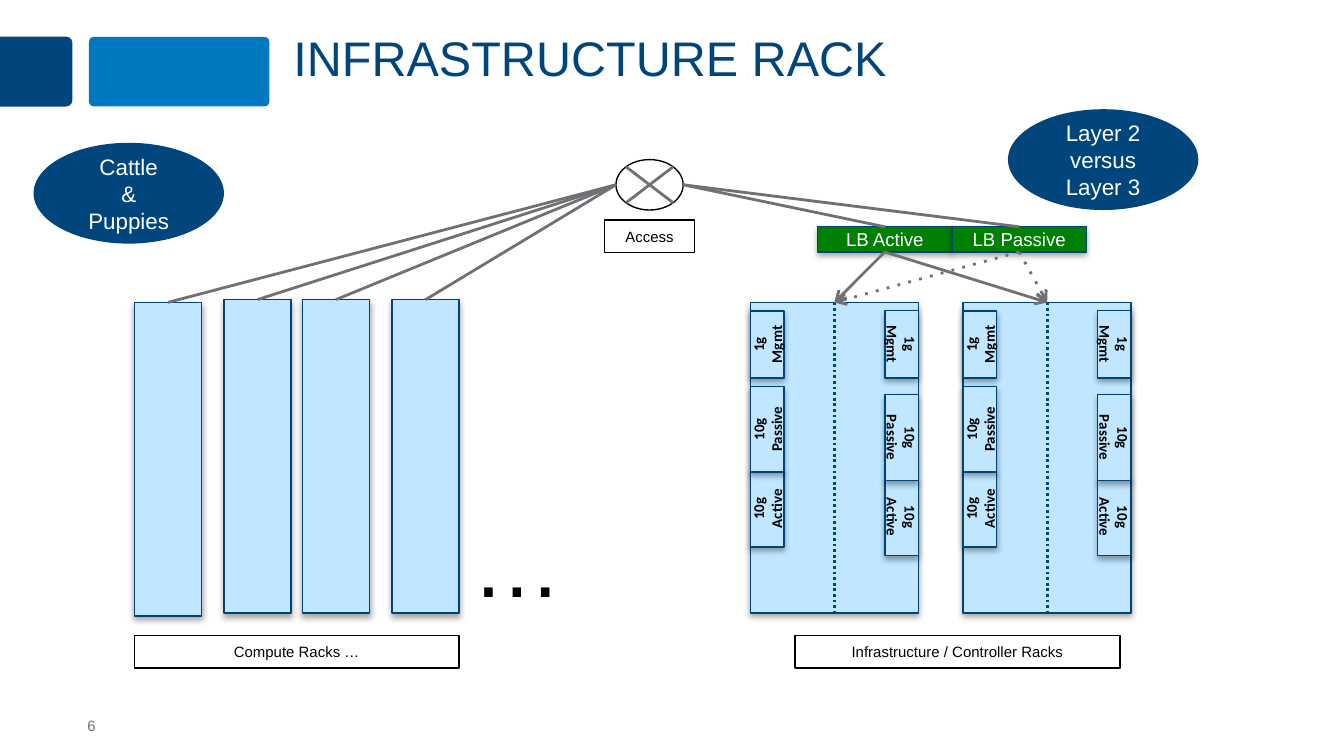
from dataclasses import dataclass

from lxml import etree
from pptx import Presentation, util as u
from pptx.dml import color
from pptx.enum import shapes, text
from pptx.oxml import ns

KIND = shapes.MSO_SHAPE
ALIGN = text.PP_ALIGN
ANCHOR = text.MSO_ANCHOR
TOP, BOTTOM = 0, 2


@dataclass(frozen=True)
class Theme:
    """Colours, fonts and type sizes of the slide."""
    navy: str = "00457C"
    blue: str = "0079C1"
    edge: str = "004379"
    pale: str = "C0E7FF"
    green: str = "008000"
    grey: str = "717074"
    black: str = "000000"
    white: str = "FFFFFF"
    font: str = "Arial"
    port_font: str = "Calibri"
    heading: float = 26
    dots: float = 48
    callout: float = 12
    balancer: float = 10
    small: float = 8
    thin: float = 0.75
    thick: float = 1.5


def rgb(value):
    """Turn a hex string into a colour."""
    return color.RGBColor.from_string(value)


class Sketch:
    """Draws on one slide, measured in a grid of 120 columns by 67.5 rows."""

    def __init__(self, deck, theme):
        """Open a title-only page and work out the grid step."""
        self.theme = theme
        self.page = deck.slides.add_slide(deck.slide_layouts[5])
        self.column = deck.slide_width / 120
        self.row = deck.slide_height / 67.5

    def place(self, left, top, width, height):
        """Convert grid cells to slide lengths."""
        return [u.Emu(round(cells * step)) for cells, step in
                zip((left, top, width, height), (self.column, self.row) * 2)]

    def letter(self, box, lines, size, ink, align=ALIGN.CENTER, anchor=ANCHOR.MIDDLE,
               font=None, bold=False, inset=None):
        """Fill a box with one paragraph per line."""
        frame = box.text_frame
        frame.word_wrap = True
        frame.vertical_anchor = anchor
        if inset is not None:
            frame.margin_left = frame.margin_right = u.Inches(inset)
            frame.margin_top = frame.margin_bottom = u.Inches(inset)
        for index, line in enumerate(lines):
            para = frame.add_paragraph() if index else frame.paragraphs[0]
            para.alignment = align
            span = para.add_run()
            span.text = line
            span.font.name = font or self.theme.font
            span.font.size = u.Pt(size)
            span.font.bold = bold
            span.font.color.rgb = rgb(ink)

    def title(self, line, area):
        """Move and format the title placeholder."""
        box = self.page.shapes.title
        box.left, box.top, box.width, box.height = self.place(*area)
        self.letter(box, [line], self.theme.heading, self.theme.navy, ALIGN.LEFT, ANCHOR.TOP)
        box.text_frame.paragraphs[0].line_spacing = 0.95

    def note(self, line, area, size, ink, **style):
        """Add free-standing text."""
        box = self.page.shapes.add_textbox(*self.place(*area))
        self.letter(box, [line], size, ink, ALIGN.LEFT, **style)

    def shape(self, kind, area, fill=None, line=None, shadow=False, turn=0, corners=()):
        """Add a preset shape."""
        box = self.page.shapes.add_shape(kind, *self.place(*area))
        box.rotation = turn
        for index, corner in enumerate(corners):
            box.adjustments[index] = corner
        if fill:
            box.fill.solid()
            box.fill.fore_color.rgb = rgb(fill)
        else:
            box.fill.background()
        if line:
            box.line.color.rgb = rgb(line)
            box.line.width = u.Pt(self.theme.thin)
        else:
            box.line.fill.background()
        box.shadow.inherit = False
        if shadow:
            effects = box.element.spPr.find(ns.qn("a:effectLst"))
            outer = etree.SubElement(effects, ns.qn("a:outerShdw"), blurRad="40000",
                                     dist="23000", dir="5400000", rotWithShape="0")
            tint = etree.SubElement(outer, ns.qn("a:srgbClr"), val=self.theme.black)
            etree.SubElement(tint, ns.qn("a:alpha"), val="35000")
        return box

    def panel(self, area, fill=None, turn=0):
        """Add an outlined rectangle with a soft shadow."""
        return self.shape(KIND.RECTANGLE, area, fill or self.theme.pale, self.theme.edge, True, turn)

    def label(self, line, area):
        """Add a small outlined caption."""
        box = self.shape(KIND.RECTANGLE, area, line=self.theme.black)
        self.letter(box, [line], self.theme.small, self.theme.black)

    def callout(self, lines, left, top):
        """Add a dark oval with a remark."""
        box = self.shape(KIND.OVAL, (left, top, 17, 9), self.theme.navy)
        self.letter(box, lines, self.theme.callout, self.theme.white, inset=0.05)

    def port(self, line, centre, middle, length, turn):
        """Add a sideways port label centred on a grid point."""
        box = self.panel((centre - length / 2, middle - 1.5, length, 3), turn=turn)
        self.letter(box, [line], self.theme.small, self.theme.black,
                    font=self.theme.port_font, bold=True)

    def link(self, start, end, ink=None, dash=None, arrow=False):
        """Join two ends, each a grid point or a shape with its side."""
        points = [place if isinstance(place[0], (int, float)) else (0, 0)
                  for place in (start, end)]
        line = self.page.shapes.add_connector(
            shapes.MSO_CONNECTOR.STRAIGHT, *self.place(*points[0], *points[1]))
        if points[0] != start:
            line.begin_connect(*start)
        if points[1] != end:
            line.end_connect(*end)
        line.line.color.rgb = rgb(ink or self.theme.grey)
        line.line.width = u.Pt(self.theme.thick)
        stroke = line.element.spPr.find(ns.qn("a:ln"))
        if dash:
            etree.SubElement(stroke, ns.qn("a:prstDash"), val=dash)
        if arrow:
            etree.SubElement(stroke, ns.qn("a:tailEnd"), type="arrow")
        etree.SubElement(line.element.spPr, ns.qn("a:effectLst"))

    def controller(self, left):
        """Add a split rack with ports along both sides."""
        rack = self.panel((left, 27, 15, 27.75))
        for offset, turn, shift in ((1.5, 270, 0), (13.5, 90, 0.75)):
            for line, top, length in (("10g Active", 42 + shift, 6.85),
                                      ("10g Passive", 34.5 + shift, 7.65),
                                      ("1g Mgmt", 27.75, 6)):
                self.port(line, left + offset, top + length / 2, length, turn)
        self.link((rack, TOP), (rack, BOTTOM), self.theme.navy, "sysDot")
        return rack


def main():
    """Build and save the deck."""
    deck = Presentation()
    deck.slide_width, deck.slide_height = u.Inches(10), u.Inches(5.625)
    theme = Theme()
    sketch = Sketch(deck, theme)

    sketch.shape(KIND.ROUND_2_SAME_RECTANGLE, (0.1, 3.15, 6.24, 6.48), theme.navy,
                 turn=90, corners=(0.09, 0))
    sketch.shape(KIND.ROUNDED_RECTANGLE, (7.95, 3.3, 16.1, 6.2), theme.blue, corners=(0.07,))
    sketch.title("INFRASTRUCTURE RACK", (25, 2.25, 92, 8.2))
    sketch.note("6", (7.8, 64, 7.5, 1.5), theme.small, theme.grey, inset=0)

    controllers = [sketch.controller(left) for left in (86, 67)]

    sketch.shape(KIND.OVAL, (55, 14.25, 6, 4.5), theme.white, theme.black)
    sketch.link((55.9, 14.9), (60.1, 18.1))
    sketch.link((60.1, 14.9), (55.9, 18.1))
    sketch.label("Access", (54, 19.65, 8, 2.9))

    for left, top in ((12, 27), (20, 26.75), (27, 26.75), (35, 26.75)):
        rack = sketch.panel((left, top, 6, 28))
        sketch.link((rack, TOP), (55, 16.5))

    for line, left, dash in (("LB Active", 73, None), ("LB Passive", 85, "dot")):
        balancer = sketch.panel((left, 20.25, 12, 2.25), theme.green)
        sketch.letter(balancer, [line], theme.balancer, theme.white)
        sketch.link((balancer, TOP), (61, 16.5))
        for rack in controllers:
            sketch.link((balancer, BOTTOM), (rack, TOP), dash=dash, arrow=True)

    sketch.label("Compute Racks …", (12, 56.75, 29, 2.9))
    sketch.label("Infrastructure / Controller Racks", (71, 56.75, 29, 2.9))
    sketch.note("…", (41, 44.75, 11, 10.9), theme.dots, theme.black, anchor=ANCHOR.TOP)
    sketch.callout(["Layer 2 versus Layer 3"], 90, 9.75)
    sketch.callout(["Cattle", "&", "Puppies"], 3, 12.75)

    deck.save("out.pptx")


if __name__ == "__main__":
    main()
